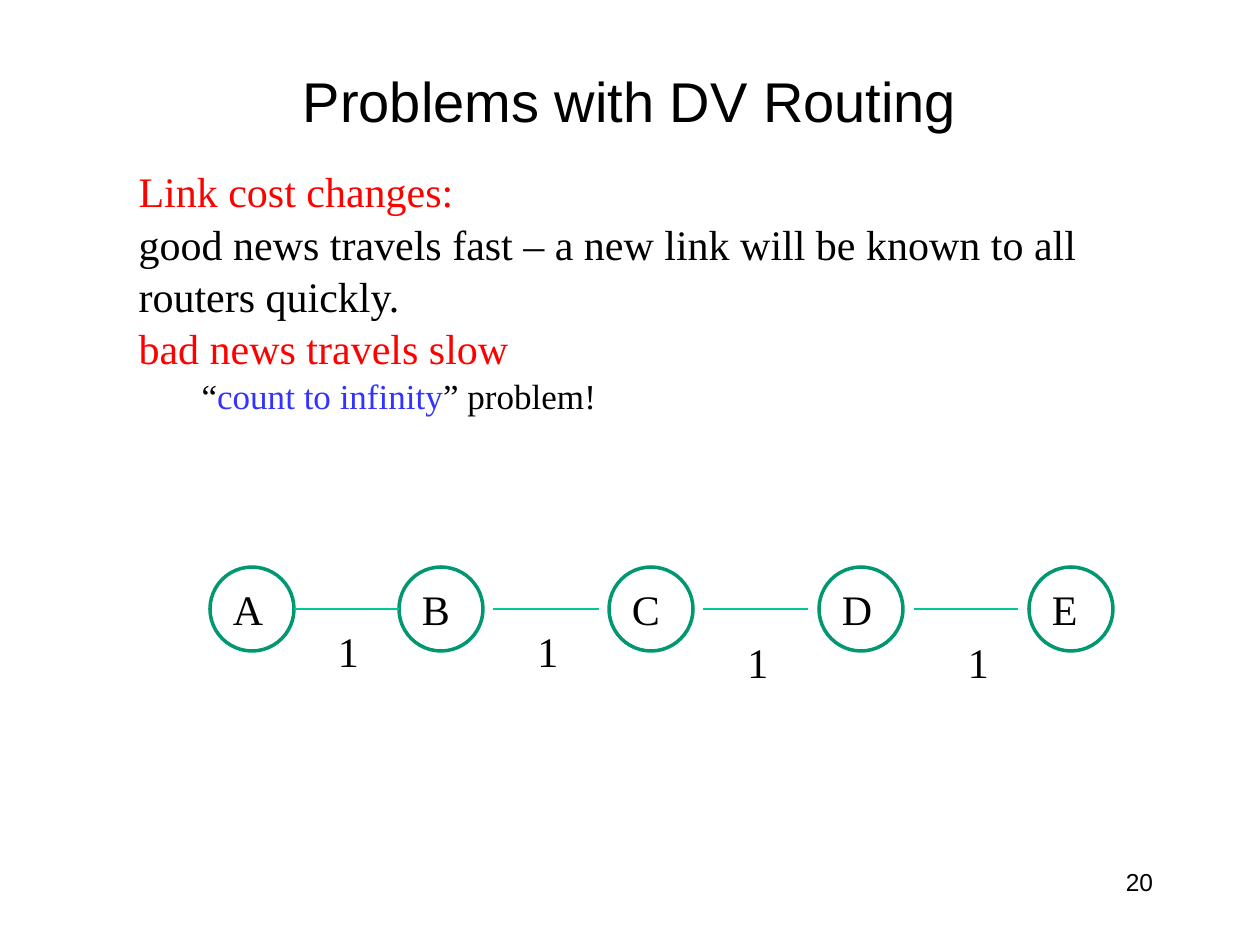
from lxml import etree
from pptx import Presentation
from pptx.dml.color import RGBColor
from pptx.enum.shapes import MSO_CONNECTOR, MSO_SHAPE
from pptx.enum.text import MSO_ANCHOR, MSO_AUTO_SIZE, PP_ALIGN
from pptx.oxml.ns import qn
from pptx.util import Inches, Pt

STRAIGHT, OVAL = MSO_CONNECTOR.STRAIGHT, MSO_SHAPE.OVAL
TOP, MIDDLE = MSO_ANCHOR.TOP, MSO_ANCHOR.MIDDLE
LEFT, CENTER, RIGHT = PP_ALIGN.LEFT, PP_ALIGN.CENTER, PP_ALIGN.RIGHT
NO_FIT = MSO_AUTO_SIZE.NONE

SANS, SERIF = "Arial", "Times New Roman"
BLACK, RED, BLUE = "000000", "FF0000", "3333FF"
NODE_GREEN, LINK_GREEN = "009771", "00C896"

NODES = {"A": 20, "B": 38, "C": 58, "D": 78, "E": 98}
NODE_ROW, NODE_SIZE = 54, 8
LINK_ROW = NODE_ROW + NODE_SIZE / 2
LINK_STARTS, LINK_LENGTH = [28, 47, 67, 87], 10
COSTS = [(31, 59), (50, 59), (70, 60), (91, 60)]


def color(value):
    return RGBColor.from_string(value)


def grid(units):
    return Inches(units / 12)


def place(sp, left, top, width, height):
    sp.left, sp.top, sp.width, sp.height = map(grid, (left, top, width, height))


def write(p, text, font=SERIF, size=24, fill=BLACK, align=LEFT):
    p.alignment = align
    r = p.add_run()
    r.text = text
    r.font.name = font
    r.font.size = Pt(size)
    r.font.color.rgb = color(fill)


def add_text(s, text, left, top, width, height=6, wrap=False, **style):
    sp = s.shapes.add_textbox(*map(grid, (left, top, width, height)))
    sp.text_frame.word_wrap = wrap
    write(sp.text_frame.paragraphs[0], text, **style)


def add_title(s, text):
    sp = s.shapes.title
    place(sp, 9, 2, 102, 15)
    sp.text_frame.auto_size = NO_FIT
    sp.text_frame.vertical_anchor = MIDDLE
    write(sp.text_frame.paragraphs[0], text, font=SANS, size=32, align=CENTER)


def add_body(s, lines):
    sp = s.placeholders[1]
    place(sp, 12, 15, 96, 25)
    tf = sp.text_frame
    tf.auto_size = NO_FIT
    tf.vertical_anchor = TOP
    for i, (level, size, runs) in enumerate(lines):
        p = tf.add_paragraph() if i else tf.paragraphs[0]
        p.level = level
        p.space_before = Pt(0)
        p.line_spacing = 1.04
        pPr = p._p.get_or_add_pPr()
        pPr.set("marL", str(Inches(level / 2)))
        pPr.set("indent", "0")
        etree.SubElement(pPr, qn("a:buNone"))
        for text, fill in runs:
            write(p, text, size=size, fill=fill)


def add_node(s, name, column):
    sp = s.shapes.add_shape(OVAL, *map(grid, (column, NODE_ROW, NODE_SIZE, NODE_SIZE)))
    sp.shadow.inherit = False
    sp.fill.background()
    sp.line.color.rgb = color(NODE_GREEN)
    sp.line.width = Pt(2)
    add_text(s, name, column + 1, NODE_ROW + 1, 5)


def add_link(s, start):
    ends = (start, LINK_ROW, start + LINK_LENGTH, LINK_ROW)
    link = s.shapes.add_connector(STRAIGHT, *map(grid, ends))
    link.line.color.rgb = color(LINK_GREEN)
    link.line.width = Pt(0.75)
    etree.SubElement(link._element.spPr, qn("a:effectLst"))


def add_network(s):
    for name, column in NODES.items():
        add_node(s, name, column)
    for start in LINK_STARTS:
        add_link(s, start)
    for column, row in COSTS:
        add_text(s, "1", column, row, 4.5)


def main():
    prs = Presentation()
    prs.slide_width, prs.slide_height = Inches(10), Inches(7.5)
    s = prs.slides.add_slide(prs.slide_layouts[1])
    add_title(s, "Problems with DV Routing")
    add_body(s, [
        (0, 24, [("Link cost changes:", RED)]),
        (0, 24, [("good news travels fast – a new link will be known to all routers quickly.", BLACK)]),
        (0, 24, [("bad news travels slow", RED)]),
        (1, 20, [("“", BLACK), ("count to infinity", BLUE), ("” problem!", BLACK)]),
    ])
    add_network(s)
    add_text(s, "20", 86, 82, 25, wrap=True, font=SANS, size=14, align=RIGHT)
    prs.save("out.pptx")


if __name__ == "__main__":
    main()
